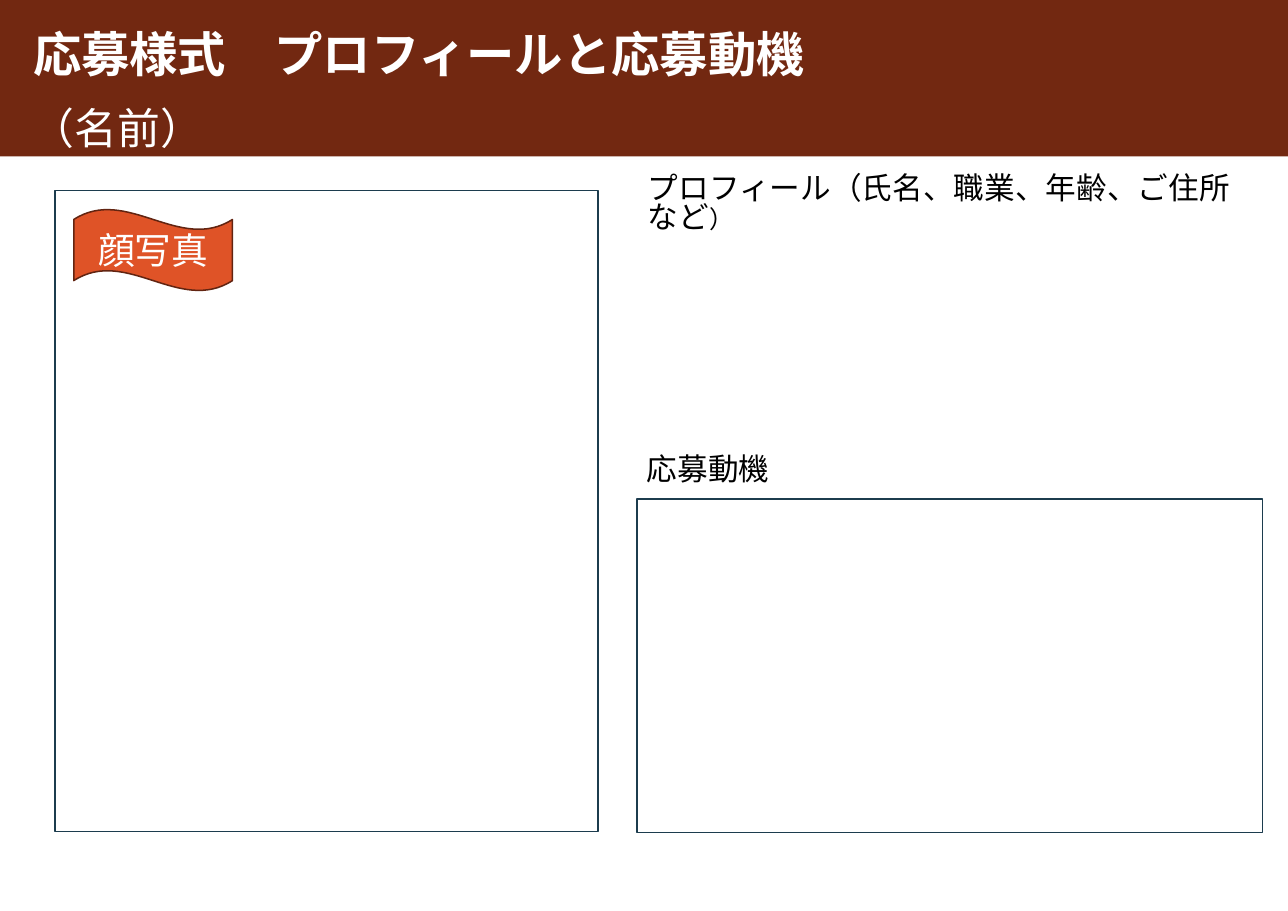
import lxml.etree
import pptx
import pptx.dml.color
import pptx.enum.shapes
import pptx.enum.text
import pptx.oxml.ns
import pptx.util

Inches = pptx.util.Inches
Pt = pptx.util.Pt
RGBColor = pptx.dml.color.RGBColor
MSO_SHAPE = pptx.enum.shapes.MSO_SHAPE
PP_ALIGN = pptx.enum.text.PP_ALIGN
MSO_ANCHOR = pptx.enum.text.MSO_ANCHOR
qn = pptx.oxml.ns.qn

BROWN = RGBColor(0x72, 0x28, 0x11)
ORANGE = RGBColor(0xDF, 0x53, 0x27)
DARK_BROWN = RGBColor(0x62, 0x24, 0x11)
NAVY = RGBColor(0x1C, 0x3C, 0x4E)
WHITE = RGBColor(0xFF, 0xFF, 0xFF)
BLACK = RGBColor(0, 0, 0)
JAPANESE_FONT = "Noto Sans CJK JP"
LATIN_FONT = "Karla"


def add_run(p, text, size, color, font=JAPANESE_FONT, bold=False):
    r = p.add_run()
    r.text = text
    r.font.size = Pt(size)
    r.font.color.rgb = color
    r.font.bold = bold
    r.font.name = font
    east_asian = lxml.etree.SubElement(r.font._element, qn("a:ea"))
    east_asian.set("typeface", JAPANESE_FONT)


def add_box(s, kind, box, fill, line=None):
    sp = s.shapes.add_shape(kind, *map(Inches, box))
    sp.shadow.inherit = False
    sp.fill.solid()
    sp.fill.fore_color.rgb = fill
    if line is None:
        sp.line.fill.background()
    else:
        sp.line.color.rgb = line
        sp.line.width = Pt(1)
    return sp


def fill_placeholder(sp, box, runs, color, anchor=MSO_ANCHOR.TOP, spacing=0.77, bold=False):
    """Move a placeholder and write its (text, size) runs without a bullet."""
    sp.left, sp.top, sp.width, sp.height = map(Inches, box)
    tf = sp.text_frame
    tf.word_wrap = True
    tf.auto_size = pptx.enum.text.MSO_AUTO_SIZE.NONE
    tf.vertical_anchor = anchor
    p = tf.paragraphs[0]
    p.alignment = PP_ALIGN.LEFT
    p.line_spacing = spacing
    p.space_before = Pt(0)
    properties = p._p.get_or_add_pPr()
    properties.set("marL", "0")
    properties.set("indent", "0")
    lxml.etree.SubElement(properties, qn("a:buNone"))
    for text, size in runs:
        add_run(p, text, size, color, bold=bold)


def add_header(s, title, name):
    band = add_box(s, MSO_SHAPE.RECTANGLE, (-0.01, 0, 11.71, 1.42), BROWN)
    band._element.getparent().insert(2, band._element)  # behind the text
    fill_placeholder(title, (0.2, 0.14, 11.25, 0.76),
                     [("応募様式　プロフィールと応募動機", 31.6)],
                     WHITE, MSO_ANCHOR.MIDDLE, 0.9, True)
    fill_placeholder(name, (0.19, 0.97, 6.71, 0.45), [("（名前）", 28)], WHITE)


def add_photo_area(s):
    add_box(s, MSO_SHAPE.RECTANGLE, (0.5, 1.73, 4.93, 5.82), WHITE, NAVY)
    label = add_box(s, MSO_SHAPE.WAVE, (0.67, 1.9, 1.44, 0.74), ORANGE, DARK_BROWN)
    label.text_frame.vertical_anchor = MSO_ANCHOR.MIDDLE
    p = label.text_frame.paragraphs[0]
    p.alignment = PP_ALIGN.CENTER
    add_run(p, "顔写真", 24, WHITE, LATIN_FONT)


def add_applicant_area(s, profile, motive):
    fill_placeholder(profile, (5.78, 1.56, 5.68, 0.32),
                     [("プロフィール（氏名、職業、年齢、ご住所など", 20), ("）", 16)], BLACK)
    fill_placeholder(motive, (5.77, 4.11, 5.68, 0.32), [("応募動機", 20)], BLACK)
    add_box(s, MSO_SHAPE.RECTANGLE, (5.78, 4.53, 5.68, 3.03), WHITE, NAVY)


def main():
    prs = pptx.Presentation()
    prs.slide_width = Inches(11.69)
    prs.slide_height = Inches(8.27)
    s = prs.slides.add_slide(prs.slide_layouts.get_by_name("Comparison"))
    title, profile, name, motive, unused = s.placeholders
    unused._element.getparent().remove(unused._element)
    add_header(s, title, name)
    add_photo_area(s)
    add_applicant_area(s, profile, motive)
    prs.save("out.pptx")


if __name__ == "__main__":
    main()
